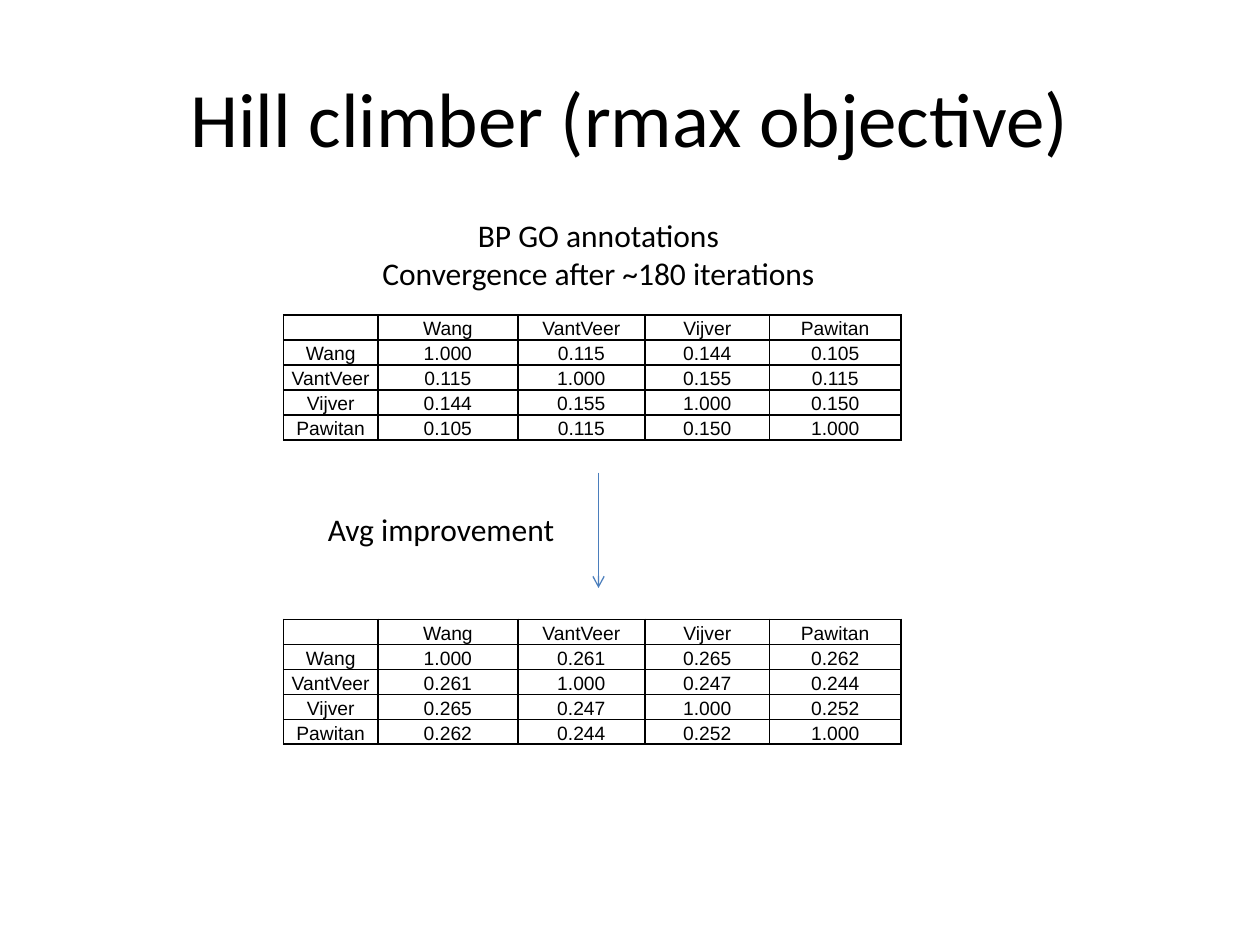
from dataclasses import dataclass
from itertools import combinations

from lxml.etree import SubElement
from pptx import Presentation
from pptx.dml.color import RGBColor
from pptx.enum.shapes import MSO_CONNECTOR
from pptx.enum.text import MSO_ANCHOR, PP_ALIGN
from pptx.oxml.ns import qn
from pptx.util import Pt


@dataclass(frozen=True)
class Theme:
    """Colours, fonts and type sizes of the slide."""
    ink: str = "000000"
    blue: str = "4B7EBC"
    body: str = "Calibri"
    grid: str = "Arial"
    title: int = 44
    note: int = 18
    cell: int = 11


THEME = Theme()
NAMES = ["Wang", "VantVeer", "Vijver", "Pawitan"]
WIDTHS = [54, 79.9, 72.7, 71.3, 74.9]
ROW = 14.26
BEFORE = ["0.115", "0.144", "0.105", "0.155", "0.115", "0.150"]
AFTER = ["0.261", "0.265", "0.262", "0.247", "0.244", "0.252"]


def style(frame, face, size):
    """Centre all paragraphs of a frame and set their font."""
    for para in frame.paragraphs:
        para.alignment = PP_ALIGN.CENTER
        for run in para.runs:
            run.font.name = face
            run.font.size = Pt(size)
            run.font.color.rgb = RGBColor.from_string(THEME.ink)


def add_title(slide, text):
    """Place and fill the title."""
    title = slide.shapes.title
    title.left, title.top = Pt(36), Pt(21.6)
    title.width, title.height = Pt(648), Pt(90)
    title.text_frame.text = text
    title.text_frame.vertical_anchor = MSO_ANCHOR.MIDDLE
    style(title.text_frame, THEME.body, THEME.title)


def add_note(slide, text, left, top, width, height):
    """Add a centred text box."""
    box = slide.shapes.add_textbox(Pt(left), Pt(top), Pt(width), Pt(height))
    box.text_frame.word_wrap = True
    box.text_frame.text = text
    style(box.text_frame, THEME.body, THEME.note)


def add_arrow(slide, x, top, end):
    """Add a vertical line with an open arrowhead at its end."""
    line = slide.shapes.add_connector(
        MSO_CONNECTOR.STRAIGHT, Pt(x), Pt(top), Pt(x), Pt(end))
    line.line.color.rgb = RGBColor.from_string(THEME.blue)
    line.line.width = Pt(0.75)
    SubElement(line.line._get_or_add_ln(), qn("a:tailEnd"), type="arrow")
    SubElement(line._element.spPr, qn("a:effectLst"))


def fill_cell(cell, text, inset):
    """Write one bordered cell without a fill."""
    cell.text_frame.text = text
    cell.vertical_anchor = MSO_ANCHOR.BOTTOM
    cell.margin_left = cell.margin_right = cell.margin_top = Pt(inset)
    cell.margin_bottom = 0
    style(cell.text_frame, THEME.grid, THEME.cell)
    if not text:
        para = cell.text_frame.paragraphs[0]._p
        SubElement(para, qn("a:endParaRPr"), sz=str(THEME.cell * 100))
    props = cell._tc.get_or_add_tcPr()
    for side in ("a:lnL", "a:lnR", "a:lnT", "a:lnB"):
        edge = SubElement(props, qn(side), w=str(Pt(1)))
        paint = SubElement(edge, qn("a:solidFill"))
        SubElement(paint, qn("a:srgbClr"), val=THEME.ink)
    cell.fill.background()


def make_grid(pairs):
    """Expand the values above the diagonal to a labelled square."""
    size = len(NAMES)
    grid = [["", *NAMES]] + [[name] + ["1.000"] * size for name in NAMES]
    for (row, col), value in zip(combinations(range(1, size + 1), 2), pairs):
        grid[row][col] = grid[col][row] = value
    return grid


def add_grid(slide, pairs, top):
    """Add a similarity table."""
    grid = make_grid(pairs)
    count = len(grid)
    table = slide.shapes.add_table(
        count, count, Pt(162), Pt(top), Pt(sum(WIDTHS)), Pt(ROW * count)).table
    table.first_row = table.horz_banding = False
    for col, width in zip(table.columns, WIDTHS):
        col.width = Pt(width)
    for row, line in enumerate(grid):
        table.rows[row].height = Pt(ROW)
        for col, text in enumerate(line):
            fill_cell(table.cell(row, col), text, 0.7 if row and col else 0)


def main():
    """Build and save the slide."""
    deck = Presentation()
    deck.slide_width, deck.slide_height = Pt(720), Pt(540)
    slide = deck.slides.add_slide(deck.slide_layouts[5])
    add_title(slide, "Hill climber (rmax objective)")
    add_grid(slide, BEFORE, 180)
    add_arrow(slide, 342, 270, 336)
    add_grid(slide, AFTER, 354)
    add_note(slide, "BP GO annotations\nConvergence after ~180 iterations",
             54, 120, 576, 51)
    add_note(slide, "Avg improvement", 168, 288, 168, 29)
    deck.save("out.pptx")


if __name__ == "__main__":
    main()
